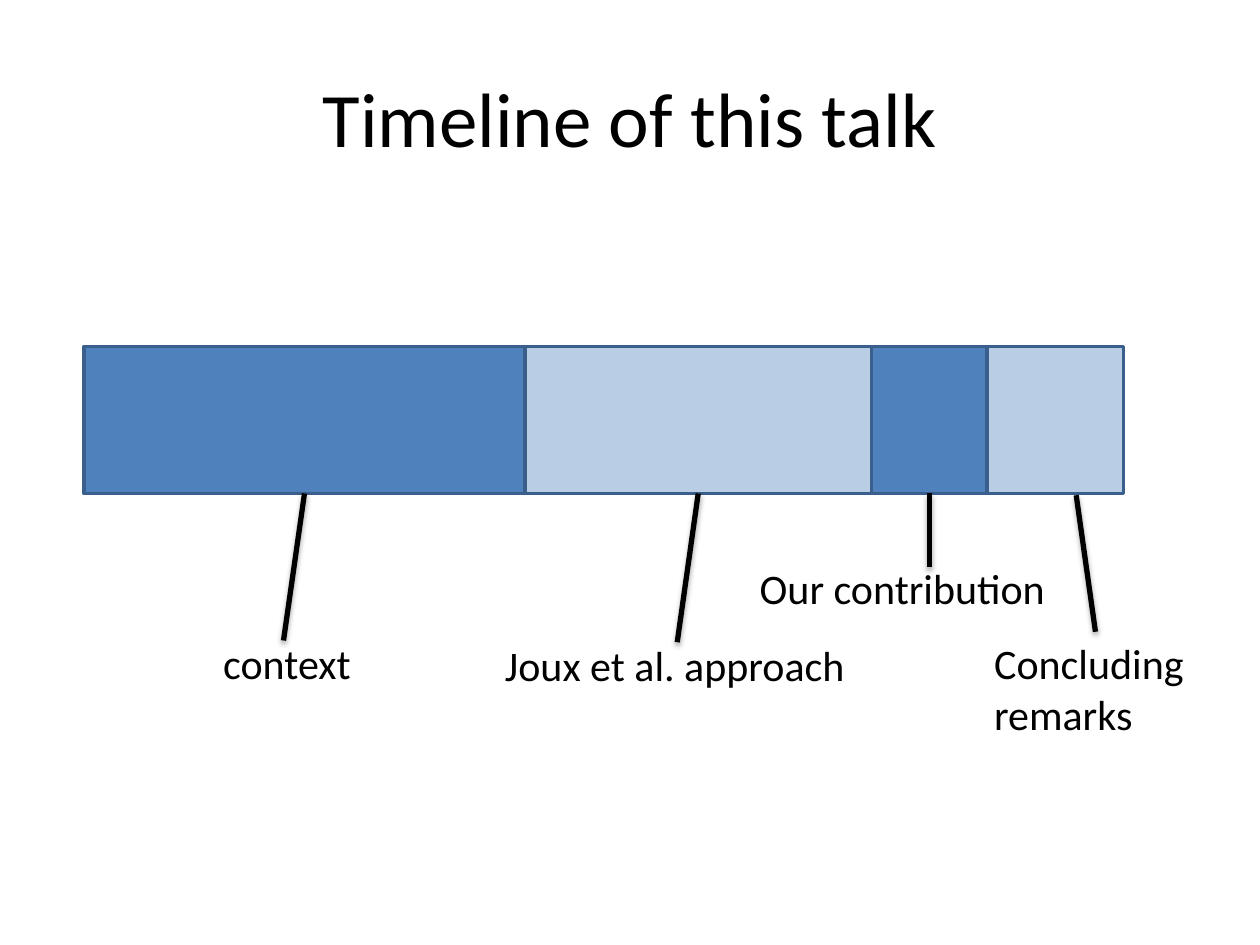
from lxml.etree import SubElement
from pptx import Presentation
from pptx.dml.color import RGBColor
from pptx.enum.shapes import MSO_CONNECTOR, MSO_SHAPE
from pptx.enum.text import MSO_ANCHOR, MSO_AUTO_SIZE, PP_ALIGN
from pptx.oxml.ns import qn
from pptx.util import Pt

BLACK = RGBColor(0x00, 0x00, 0x00)
BLUE = RGBColor(0x4F, 0x81, 0xBD)
PALE_BLUE = RGBColor(0xB9, 0xCD, 0xE5)
OUTLINE = RGBColor(0x3A, 0x5F, 0x8C)
FONT = "Calibri"

BAR_LEFT, BAR_TOP, BAR_HEIGHT = 48, 198, 84
BOTTOM_SIDE = 2

# segment width, label lines, label box, start of leader
SECTIONS = [
    (252, ["context"], (120.5, 361, 88, 36), (162, 366)),
    (198, ["Joux et al. approach"], (281.5, 362, 210, 36), (387, 367)),
    (66, ["Our contribution"], (427, 318, 179, 36), (531, 324)),
    (78, ["Concluding", "remarks"], (561, 361, 129.5, 65.5), (626, 361)),
]
CONCLUDING_LEADER_END = (615, 283)


def add_text(page, lines, left, top, width, height, *, size, align=PP_ALIGN.LEFT,
             anchor=MSO_ANCHOR.TOP, wrap=False, fit=MSO_AUTO_SIZE.SHAPE_TO_FIT_TEXT):
    box = page.shapes.add_textbox(Pt(left), Pt(top), Pt(width), Pt(height))
    frame = box.text_frame
    frame.word_wrap = wrap
    frame.auto_size = fit
    frame.vertical_anchor = anchor
    frame.text = "\n".join(lines)
    for para in frame.paragraphs:
        para.alignment = align
        for span in para.runs:
            span.font.name = FONT
            span.font.size = Pt(size)
            span.font.color.rgb = BLACK


def add_segment(page, left, width, color):
    segment = page.shapes.add_shape(
        MSO_SHAPE.RECTANGLE, Pt(left), Pt(BAR_TOP), Pt(width), Pt(BAR_HEIGHT))
    segment.shadow.inherit = False
    segment.fill.solid()
    segment.fill.fore_color.rgb = color
    segment.line.color.rgb = OUTLINE
    segment.line.width = Pt(2)
    return segment


def add_soft_shadow(connector):
    effects = SubElement(connector._element.spPr, qn("a:effectLst"))
    shadow = SubElement(effects, qn("a:outerShdw"), blurRad=str(Pt(3.1)),
                        dist=str(Pt(1.8)), dir="5400000", rotWithShape="0")
    color = SubElement(shadow, qn("a:srgbClr"), val=str(BLACK))
    SubElement(color, qn("a:alpha"), val="35000")


def add_leader(page, start, end, segment=None):
    """Draw a line from a label to the bar, joined to a segment if one is given."""
    leader = page.shapes.add_connector(
        MSO_CONNECTOR.STRAIGHT, *(Pt(value) for value in start + end))
    if segment is not None:
        leader.end_connect(segment, BOTTOM_SIDE)
    leader.line.color.rgb = BLACK
    leader.line.width = Pt(3)
    add_soft_shadow(leader)


def add_timeline(page):
    segments = []
    left = BAR_LEFT
    for index, (width, *_) in enumerate(SECTIONS):
        color = PALE_BLUE if index % 2 else BLUE
        segments.append(add_segment(page, left, width, color))
        left += width

    for segment, (_, lines, label_box, start) in zip(segments, SECTIONS):
        joined = None if segment is segments[-1] else segment
        add_leader(page, start, CONCLUDING_LEADER_END, joined)
        add_text(page, lines, *label_box, size=24)


def main():
    deck = Presentation()
    deck.slide_width, deck.slide_height = Pt(720), Pt(540)
    page = deck.slides.add_slide(deck.slide_layouts[6])
    add_text(page, ["Timeline of this talk"], 36, 21.6, 648, 90, size=44,
             align=PP_ALIGN.CENTER, anchor=MSO_ANCHOR.MIDDLE, wrap=True,
             fit=MSO_AUTO_SIZE.NONE)
    add_timeline(page)
    deck.save("out.pptx")


if __name__ == "__main__":
    main()
